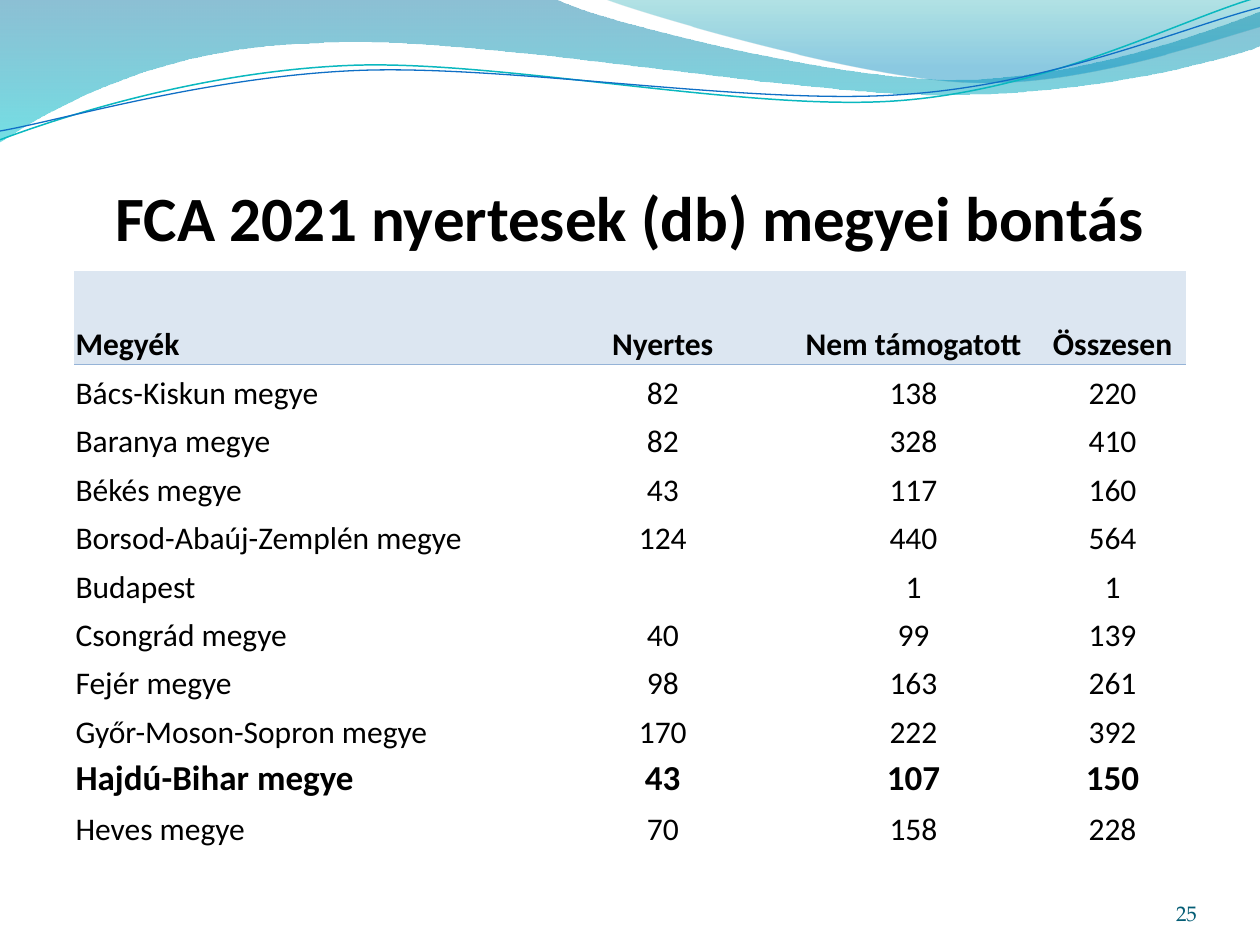
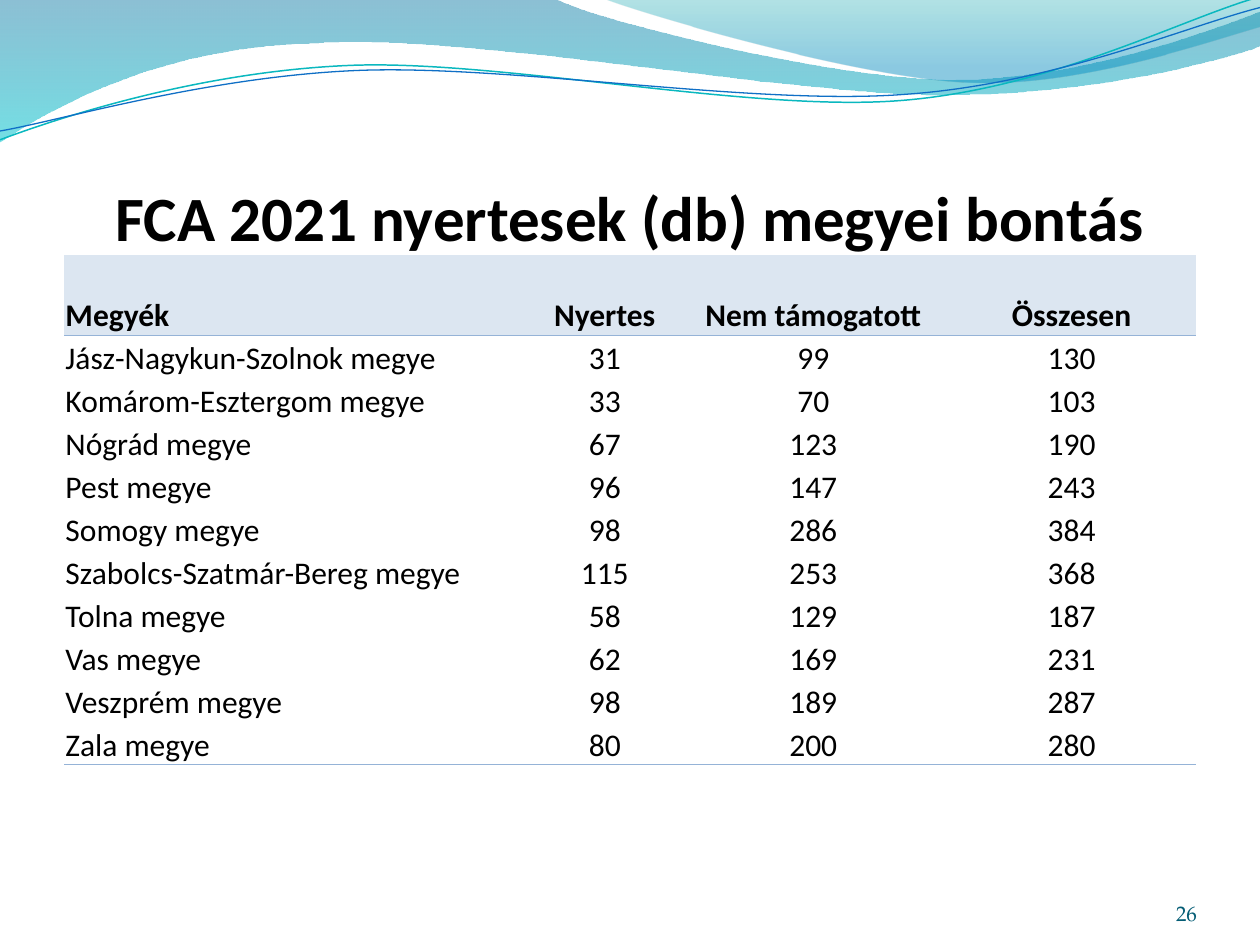
"""Builds two slides of county results, each a table under a wave band."""
from lxml.etree import SubElement
from pptx import Presentation
from pptx.dml.color import RGBColor
from pptx.enum.text import MSO_ANCHOR, MSO_AUTO_SIZE, PP_ALIGN
from pptx.oxml.ns import qn
from pptx.util import Inches, Pt

TITLE = "FCA 2021 nyertesek (db) megyei bontás"
HEAD = ("Megyék", "Nyertes", "Nem támogatott", "Összesen")
PAGES = [
    {
        "no": 25, "at": (0.59, 2.15), "cols": (3.68, 1.98, 2, 1.16),
        "head": 0.74, "high": 4.59, "bold": "Hajdú-Bihar megye", "foot": False,
        "rows": [
            ("Bács-Kiskun megye", 82, 138, 220),
            ("Baranya megye", 82, 328, 410),
            ("Békés megye", 43, 117, 160),
            ("Borsod-Abaúj-Zemplén megye", 124, 440, 564),
            ("Budapest", "", 1, 1),
            ("Csongrád megye", 40, 99, 139),
            ("Fejér megye", 98, 163, 261),
            ("Győr-Moson-Sopron megye", 170, 222, 392),
            ("Hajdú-Bihar megye", 43, 107, 150),
            ("Heves megye", 70, 158, 228),
        ],
    },
    {
        "no": 26, "at": (0.51, 2.02), "cols": (3.7, 1.18, 2.13, 1.97),
        "head": 0.64, "high": 4.05, "bold": None, "foot": True,
        "rows": [
            ("Jász-Nagykun-Szolnok megye", 31, 99, 130),
            ("Komárom-Esztergom megye", 33, 70, 103),
            ("Nógrád megye", 67, 123, 190),
            ("Pest megye", 96, 147, 243),
            ("Somogy megye", 98, 286, 384),
            ("Szabolcs-Szatmár-Bereg megye", 115, 253, 368),
            ("Tolna megye", 58, 129, 187),
            ("Vas megye", 62, 169, 231),
            ("Veszprém megye", 98, 189, 287),
            ("Zala megye", 80, 200, 280),
        ],
    },
]

WAVES = [
    {
        "start": (0, 0),
        "parts": [
            (4.4, -0.01), (4.76, 0.17, 6.64, 0.63, 7.58, 0.63),
            (8.53, 0.63, 9.58, 0.26, 10, 0.09), (10.01, 0.36),
            (9.83, 0.44, 8.7, 0.76, 7.46, 0.75),
            (6.22, 0.75, 3.82, 0.28, 2.57, 0.34),
            (1.29, 0.36, 0.46, 0.83, -0.01, 1.13),
        ],
        "stops": [(0, "0074A1", 45), (1, "00C6CF", 55)],
    },
    {
        "start": (4.79, -0.01),
        "parts": [
            (5.09, 0.11, 6.82, 0.62, 7.69, 0.65),
            (8.56, 0.69, 9.61, 0.32, 10, 0.21), (10, 0),
        ],
        "stops": [(0, "00A1A9", 30), (0.8, "008BBF", 45)],
    },
    {
        "start": (0, 1.11),
        "parts": [
            (0.48, 0.93, 1.58, 0.57, 2.77, 0.52),
            (3.95, 0.47, 5.93, 0.89, 7.13, 0.8),
            (8.33, 0.71, 9.38, 0.15, 9.98, -0.02),
        ],
        "line": ("0AB8BF", 0.85),
    },
    {
        "start": (0, 1.04),
        "parts": [
            (0.47, 0.96, 1.64, 0.61, 2.83, 0.56),
            (4.03, 0.51, 5.97, 0.84, 7.17, 0.75),
            (8.36, 0.67, 9.41, 0.21, 10, 0.06),
        ],
        "line": ("0F6FC6", 0.75),
    },
]

SANS, SERIF = "Calibri", "TeX Gyre Pagella"
BLACK, TEAL, PALE, RULE = "000000", "045D75", "DCE6F1", "95B3D7"
PLAIN = "{2D5ABB26-0587-4C30-8999-92F81FD0307C}"


def paint(tone):
    return RGBColor.from_string(tone)


def write(frame, text, size, name=SANS, tone=BLACK, bold=False, align=PP_ALIGN.CENTER):
    frame.text = str(text)
    para = frame.paragraphs[0]
    para.alignment = align
    for run in para.runs:
        font = run.font
        font.size, font.name, font.bold = Pt(size), name, bold
        font.color.rgb = paint(tone)


def inset(box, left, top, right, low):
    box.margin_left, box.margin_top = Inches(left), Inches(top)
    box.margin_right, box.margin_bottom = Inches(right), Inches(low)
    box.vertical_anchor = MSO_ANCHOR.BOTTOM


def bend(shape, parts):
    nodes = list(shape.element.iter(qn("a:lnTo")))
    for node, part in zip(nodes, parts):
        if len(part) == 2:
            continue
        node.tag = qn("a:cubicBezTo")
        for i in (0, 2):
            x, y = Inches(part[i]) - shape.left, Inches(part[i + 1]) - shape.top
            knot = SubElement(node, qn("a:pt"), x=str(x), y=str(y))
            node.insert(i // 2, knot)


def draw_wave(slide, wave):
    ends = [tuple(map(Inches, part[-2:])) for part in wave["parts"]]
    pen = slide.shapes.build_freeform(*map(Inches, wave["start"]))
    pen.add_line_segments(ends, close="stops" in wave)
    shape = pen.convert_to_shape()
    bend(shape, wave["parts"])
    shape.shadow.inherit = False
    if "line" in wave:
        tone, width = wave["line"]
        shape.fill.background()
        shape.line.color.rgb = paint(tone)
        shape.line.width = Pt(width)
        return shape
    shape.line.fill.background()
    shape.fill.gradient()
    shape.fill.gradient_angle = 270
    for stop, (place, tone, _) in zip(shape.fill.gradient_stops, wave["stops"]):
        stop.position = place
        stop.color.rgb = paint(tone)
    for node, (_, _, alpha) in zip(shape.element.iter(qn("a:srgbClr")), wave["stops"]):
        SubElement(node, qn("a:alpha"), val=str(alpha * 1000))
    return shape


def rule_off(cell):
    props = cell._tc.get_or_add_tcPr()
    line = SubElement(props, qn("a:lnB"), w=str(Pt(0.5)))
    fill = SubElement(line, qn("a:solidFill"))
    SubElement(fill, qn("a:srgbClr"), val=RULE)
    props.insert(0, line)


def add_grid(slide, page):
    rows = [HEAD] + page["rows"]
    cols, last = page["cols"], len(rows) - 1
    spot = [Inches(n) for n in (*page["at"], sum(cols), page["high"])]
    frame = slide.shapes.add_table(len(rows), len(cols), *spot)
    frame.element.find(".//" + qn("a:tableStyleId")).text = PLAIN
    grid = frame.table
    grid.first_row = grid.horz_banding = False
    for col, width in zip(grid.columns, cols):
        col.width = Inches(width)
    step = (page["high"] - page["head"]) / last
    for r, row in enumerate(rows):
        grid.rows[r].height = Inches(step if r else page["head"])
        strong = row[0] == page["bold"]
        for c, value in enumerate(row):
            cell = grid.cell(r, c)
            inset(cell, 0.01, 0.01, 0.01, 0)
            write(cell.text_frame, value, 20 if strong else 18, bold=strong or r == 0,
                  align=PP_ALIGN.CENTER if c else PP_ALIGN.LEFT)
            if r == 0:
                cell.fill.solid()
                cell.fill.fore_color.rgb = paint(PALE)
            else:
                cell.fill.background()
            if r == 0 or r == last and page["foot"]:
                rule_off(cell)


def add_page(deck, layout, page):
    slide = deck.slides.add_slide(layout)
    title = slide.shapes.title
    title.left, title.top, title.width, title.height = map(Inches, (0.5, 0.77, 9, 1.25))
    inset(title.text_frame, 0, 0.05, 0, 0)
    title.text_frame.auto_size = MSO_AUTO_SIZE.NONE
    write(title.text_frame, TITLE, 36, bold=True)
    add_grid(slide, page)
    box = slide.shapes.add_textbox(*map(Inches, (8.67, 6.95, 0.83, 0.4)))
    box.text_frame.word_wrap = True
    inset(box.text_frame, 0, 0, 0, 0)
    write(box.text_frame, page["no"], 12, SERIF, TEAL, align=PP_ALIGN.RIGHT)
    return slide


def main():
    deck = Presentation()
    deck.slide_width, deck.slide_height = Inches(10), Inches(7.5)
    layout = deck.slide_layouts.get_by_name("Title Only")
    slides = [add_page(deck, layout, page) for page in PAGES]
    for wave in WAVES:
        layout.shapes.element.append(draw_wave(slides[0], wave).element)
    deck.save("out.pptx")


if __name__ == "__main__":
    main()
